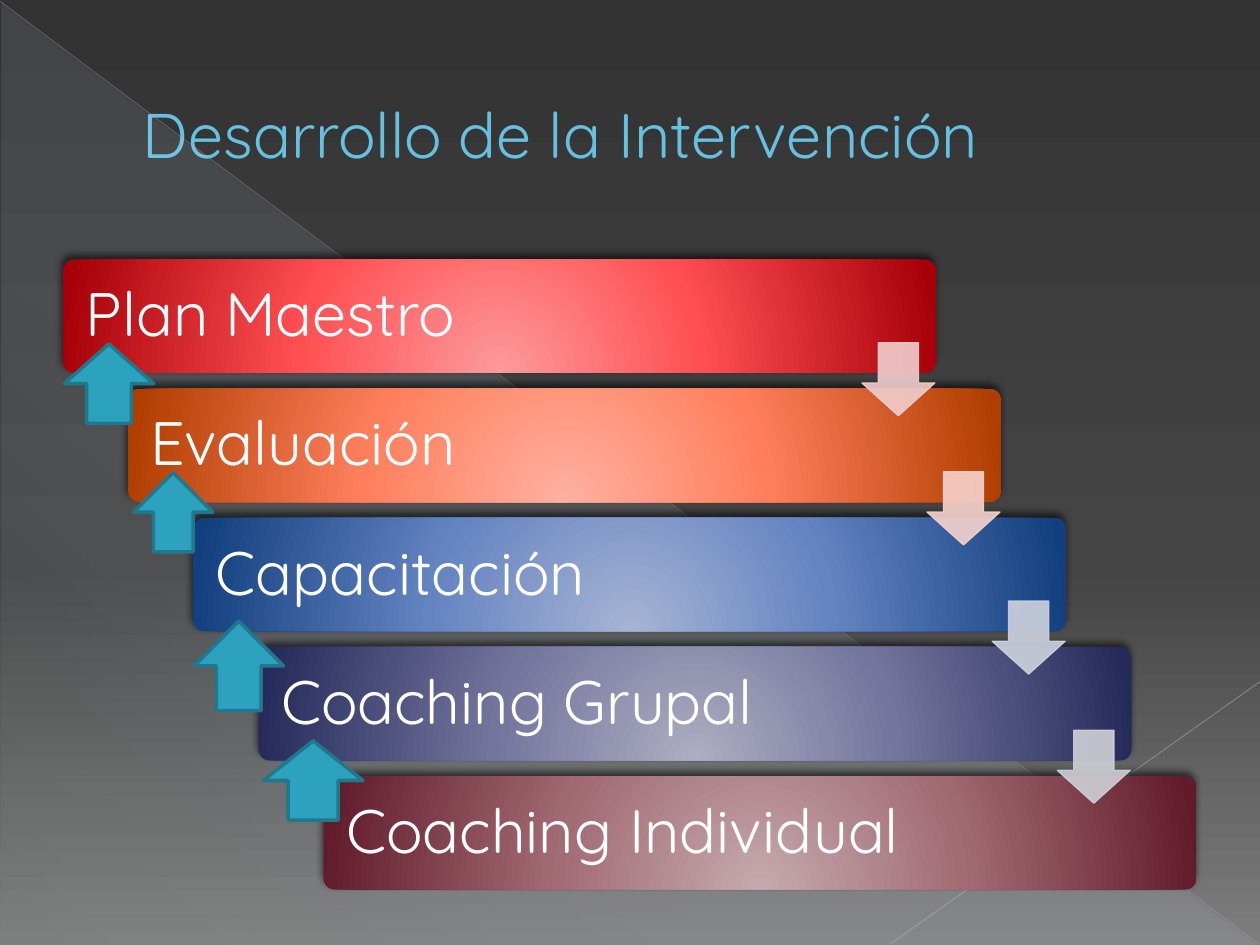
from lxml.etree import SubElement
from pptx import Presentation
from pptx.dml.color import RGBColor
from pptx.enum.shapes import MSO_CONNECTOR as Connector, MSO_SHAPE as Shape
from pptx.enum.text import MSO_ANCHOR as Anchor, PP_ALIGN as Align
from pptx.oxml import parse_xml
from pptx.oxml.ns import nsdecls, qn
from pptx.util import Inches, Pt

COLUMNS, ROWS = 100, 75
ARROW = "2DA2BF"
ARROW_EDGE = "21788D"

# Step name, gradient colours, colour of the arrow leading to the next step
STEPS = [
    ("Plan Maestro", ("FC9A9B", "FF4F52", "A70008"), "F1CDCD"),
    ("Evaluación", ("FFB0A0", "FF7F5D", "B03E00"), "F7D3CD"),
    ("Capacitación", ("A6B4D4", "6483C1", "123F7E"), "CED3DF"),
    ("Coaching Grupal", ("ADAEC1", "73759D", "262A5A"), "CFD0D6"),
    ("Coaching Individual", ("C4AAAE", "A36C75", "611B2A"), None),
]
# Return arrows: left, top, width, height in grid units
RETURNS = [(20.9, 58.8, 7.9, 6.3), (15.4, 49.3, 7.1, 7.1),
           (10.6, 37.5, 6.3, 6.3), (5.1, 27.3, 7.1, 6.3)]


def color(value):
    return RGBColor.from_string(value)


def assign(target, values):
    for name, value in values.items():
        setattr(target, name, value)


def set_alpha(parent, percent):
    for node in parent.iter(qn("a:srgbClr")):
        SubElement(node, qn("a:alpha")).set("val", str(percent * 1000))


def gradient(stops, angle=None):
    """Gradient fill of (position, colour, opacity); radial without an angle."""
    marks = "".join(
        f'<a:gs pos="{position * 1000}"><a:srgbClr val="{value}">'
        f'<a:alpha val="{opacity * 1000}"/></a:srgbClr></a:gs>'
        for position, value, opacity in stops)
    if angle is None:
        direction = ('<a:path path="circle"><a:fillToRect l="50000" t="155000" '
                     'r="50000" b="-55000"/></a:path>')
    else:
        direction = f'<a:lin ang="{angle * 60000}" scaled="0"/>'
    return parse_xml(f'<a:gradFill {nsdecls("a")} rotWithShape="1">'
                     f'<a:gsLst>{marks}</a:gsLst>{direction}</a:gradFill>')


def swap_fill(parent, new_fill):
    parent.replace(parent.find(qn("a:solidFill")), new_fill)


class Deck:
    font = "Quicksand"

    def __init__(self):
        self.presentation = Presentation()
        assign(self.presentation,
               {"slide_width": Inches(10), "slide_height": Inches(7.5)})
        self.column = self.presentation.slide_width / COLUMNS
        self.row = self.presentation.slide_height / ROWS
        self.slide = self.presentation.slides.add_slide(
            self.presentation.slide_layouts[5])

    def place(self, left, top, width, height):
        return (round(left * self.column), round(top * self.row),
                round(width * self.column), round(height * self.row))

    def background(self, stops, angle):
        self.slide.background.fill.solid()
        swap_fill(self.slide.element.find(".//" + qn("p:bgPr")),
                  gradient(stops, angle))

    def add_text(self, frame, text, size, value, **paragraph_format):
        assign(frame, {"word_wrap": True, "vertical_anchor": Anchor.MIDDLE})
        paragraph = frame.paragraphs[0]
        assign(paragraph, {"alignment": Align.LEFT, **paragraph_format})
        run = paragraph.add_run()
        run.text = text
        assign(run.font, {"name": self.font, "size": Pt(size)})
        run.font.color.rgb = color(value)
        return paragraph, run

    def title(self, box, text, size, value, edge):
        title = self.slide.shapes.title
        assign(title, dict(zip(("left", "top", "width", "height"),
                               self.place(*box))))
        paragraph, run = self.add_text(title.text_frame, text, size, value)
        properties = paragraph._p.get_or_add_pPr()
        properties.set("marL", str(Inches(0.53)))
        properties.set("indent", "0")
        run.font._element.insert(0, parse_xml(
            f'<a:ln {nsdecls("a")} w="{Pt(0.5)}"><a:solidFill>'
            f'<a:srgbClr val="{edge}"/></a:solidFill></a:ln>'))

    def shape(self, kind, box, fill, edge=None, weight=1, alpha=None,
              adjustments=()):
        shape = self.slide.shapes.add_shape(kind, *self.place(*box))
        shape.shadow.inherit = False
        for index, value in enumerate(adjustments):
            shape.adjustments[index] = value
        shape.fill.solid()
        if isinstance(fill, str):
            shape.fill.fore_color.rgb = color(fill)
        else:
            swap_fill(shape.element.spPr, fill)
        if edge:
            shape.line.color.rgb = color(edge)
            shape.line.width = Pt(weight)
        else:
            shape.line.fill.background()
        if alpha:
            set_alpha(shape.element.spPr, alpha)
        return shape

    def bar(self, box, colors):
        stops = [(position, value, 100)
                 for position, value in zip((0, 46, 100), colors)]
        shape = self.shape(Shape.ROUNDED_RECTANGLE, box, gradient(stops),
                           adjustments=[0.1])
        shape.element.spPr.find(qn("a:effectLst")).append(parse_xml(
            f'<a:outerShdw {nsdecls("a")} blurRad="{Pt(4)}" dist="{Pt(3)}" '
            f'dir="{245 * 60000}" rotWithShape="0"><a:srgbClr val="000000">'
            '<a:alpha val="60000"/></a:srgbClr></a:outerShdw>'))

    def label(self, box, text):
        frame = self.slide.shapes.add_textbox(*self.place(*box)).text_frame
        assign(frame, {f"margin_{side}": Inches(0.15)
                       for side in ("left", "top", "right", "bottom")})
        paragraph, _ = self.add_text(frame, text, 35, "FFFFFF",
                                     line_spacing=0.9)
        space = SubElement(paragraph._p.pPr, qn("a:spcAft"))
        SubElement(space, qn("a:spcPct")).set("val", "35000")

    def line(self, start, end, value, weight, alpha):
        connector = self.slide.shapes.add_connector(
            Connector.STRAIGHT, *self.place(*start, *end))
        connector.line.color.rgb = color(value)
        connector.line.width = Pt(weight)
        properties = connector.element.spPr
        set_alpha(properties, alpha)
        SubElement(properties, qn("a:effectLst"))


def main():
    deck = Deck()

    # Backdrop: gradient, pale triangle and fine diagonals
    deck.background([(0, "333333", 100), (60, "444444", 100),
                     (100, "7D7D7D", 100)], 90)
    pale = [(0, "DEF5FA", 10), (70, "DEF5FA", 8), (100, "DEF5FA", 1)]
    deck.shape(Shape.RIGHT_TRIANGLE, (0.1, 0.2, 99.8, 74.8),
               gradient(pale, 133))
    deck.line((0, 0.1), (99.9, 74.9), "B9B9B9", 0.39, 35)
    deck.line((100, 54.1), (70.7, 74.9), "C1C1C1", 0.47, 45)

    # Title
    deck.title((5, 2.9, 90, 15.3), "Desarrollo de la Intervención",
               36, "66C0E0", "1F7084")

    # Staircase of steps
    offsets = [(5.17 * index, 10.25 * index) for index in range(len(STEPS))]
    for (right, down), (name, colors, _) in zip(offsets, STEPS):
        deck.bar((5 + right, 20.6 + down, 69.3, 9), colors)
        deck.label((5.3 + right, 20.9 + down, 57.7, 8.5), name)

    # Arrows down to the next step
    for (right, down), (_, _, tint) in zip(offsets, STEPS):
        if tint:
            deck.shape(Shape.DOWN_ARROW,
                       (68.4 + right, 27.2 + down, 5.8, 5.8), tint, tint,
                       0.75, 90, [0.55, 0.45])

    # Arrows back up
    for box in RETURNS:
        deck.shape(Shape.UP_ARROW, box, ARROW, ARROW_EDGE, 2)

    deck.presentation.save("out.pptx")


if __name__ == "__main__":
    main()
